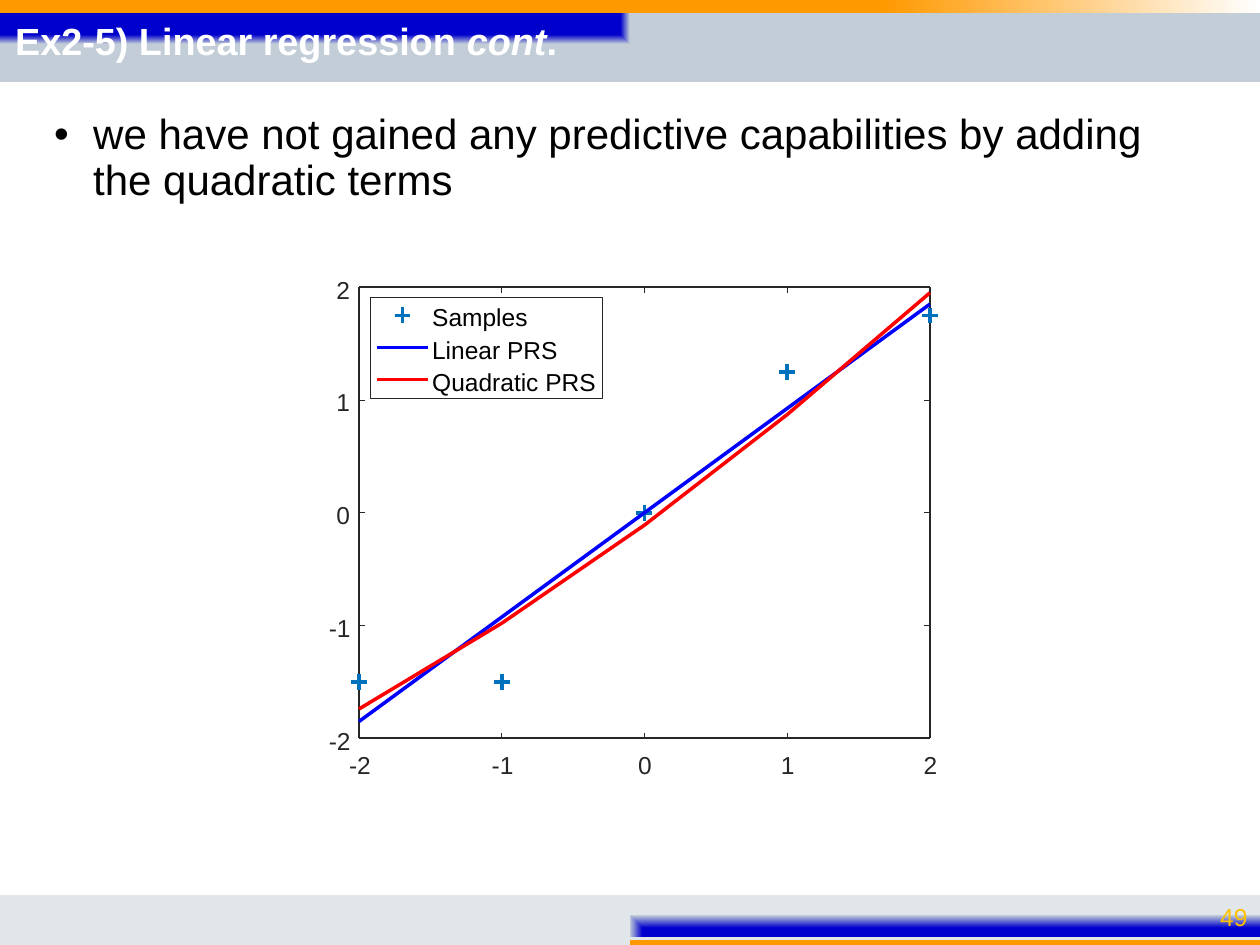
import pptx
import pptx.dml.color
import pptx.enum.shapes
import pptx.enum.text
import pptx.oxml
import pptx.oxml.ns
import pptx.util
from dataclasses import dataclass
from typing import NamedTuple

COLORS = {
    "orange": "FF9900", "navy": "0000CC", "steel": "C2CDD7", "mist": "E1E6EB",
    "white": "FFFFFF", "black": "000000", "gold": "FFC000", "axis": "262626",
    "sample": "0072BD", "linear": "0000FF", "quadratic": "FF0000",
}
UNIT = pptx.util.Inches(0.1)
COLUMNS, ROWS = 100, 75
FONT = "Arial"
TICKS = range(-2, 3)
TICK_LENGTH = 0.45
MARK_REACH = 0.63


class Area(NamedTuple):
    left: float
    top: float
    width: float
    height: float

    def emu(self) -> list[int]:
        return [round(value * UNIT) for value in self]


class Spot(NamedTuple):
    column: float
    row: float

    def shift(self, columns: float, rows: float) -> "Spot":
        return Spot(self.column + columns, self.row + rows)

    def emu(self) -> tuple[int, int]:
        return round(self.column * UNIT), round(self.row * UNIT)


@dataclass
class Band:
    area: Area
    stops: list[tuple[int, str]]
    direction: str


@dataclass
class Series:
    name: str
    color: str
    values: list[float]
    marked: bool
    label_width: float


PLOT = Area(28.5, 22.8, 45.3, 35.8)
LEGEND = Area(29.4, 23.6, 18.4, 8)
LEGEND_STEP = 2.55


def corner(left: int, top: int, right: int, bottom: int) -> str:
    sides = f'l="{left}" t="{top}" r="{right}" b="{bottom}"'
    return f'<a:path path="rect"><a:fillToRect {sides}/></a:path>'


TOP_LEFT = corner(0, 0, 100000, 100000)
BOTTOM_RIGHT = corner(100000, 100000, 0, 0)
BANDS = [
    Band(Area(0, 0.5, COLUMNS, 6), [(25, "navy"), (75, "navy"), (100, "steel")], TOP_LEFT),
    Band(Area(0, 0, COLUMNS, 1),
         [(46, "orange"), (70, "orange"), (100, "white"), (100, "mist")],
         '<a:lin ang="0" scaled="1"/>'),
    Band(Area(0, ROWS - 0.8, COLUMNS, 0.8),
         [(50, "orange"), (93, "orange"), (100, "white"), (100, "mist")], BOTTOM_RIGHT),
    Band(Area(0, 71, COLUMNS, 3.3),
         [(40, "navy"), (100, "steel"), (100, "mist")], BOTTOM_RIGHT),
]
SERIES = [
    Series("Samples", "sample", [-1.5, -1.5, 0, 1.25, 1.75], True, 9.1),
    Series("Linear PRS", "linear", [-1.85, -0.925, 0, 0.925, 1.85], False, 11.6),
    Series("Quadratic PRS", "quadratic", [-1.74, -0.98, -0.11, 0.87, 1.95], False, 14.8),
]


def rgb(color: str) -> pptx.dml.color.RGBColor:
    return pptx.dml.color.RGBColor.from_string(COLORS[color])


def apply(target, formats: dict) -> None:
    for name, value in formats.items():
        setattr(target, name, value)


def locate(x: float, y: float) -> Spot:
    return Spot(PLOT.left + (x + 2) / 4 * PLOT.width, PLOT.top + (2 - y) / 4 * PLOT.height)


def set_line(line, color: str, width: float) -> None:
    line.color.rgb = rgb(color)
    line.width = pptx.util.Pt(width)


def add_box(page, area: Area, fill: str | None = None, outline: str | None = None):
    box = page.shapes.add_shape(pptx.enum.shapes.MSO_SHAPE.RECTANGLE, *area.emu())
    box.shadow.inherit = False
    box.fill.background()
    box.line.fill.background()
    if fill:
        box.fill.solid()
        box.fill.fore_color.rgb = rgb(fill)
    if outline:
        set_line(box.line, outline, 0.5)
    return box


def add_band(page, band: Band) -> None:
    properties = add_box(page, band.area).element.spPr
    stops = "".join(
        f'<a:gs pos="{share * 1000}"><a:srgbClr val="{COLORS[color]}"/></a:gs>'
        for share, color in band.stops)
    gradient = pptx.oxml.parse_xml(
        f'<a:gradFill {pptx.oxml.ns.nsdecls("a")} rotWithShape="1">'
        f"<a:gsLst>{stops}</a:gsLst>{band.direction}</a:gradFill>")
    properties.replace(properties.find(pptx.oxml.ns.qn("a:noFill")), gradient)


def add_line(page, start: Spot, end: Spot, color: str, width: float) -> None:
    line = page.shapes.add_connector(
        pptx.enum.shapes.MSO_CONNECTOR.STRAIGHT, *start.emu(), *end.emu())
    set_line(line.line, color, width)
    line.element.spPr.append(
        pptx.oxml.parse_xml(f'<a:effectLst {pptx.oxml.ns.nsdecls("a")}/>'))


def add_strokes(page, strokes: list[list[Spot]], color: str) -> None:
    builder = page.shapes.build_freeform(*strokes[0][0].emu())
    for index, stroke in enumerate(strokes):
        if index:
            builder.move_to(*stroke[0].emu())
        builder.add_line_segments([spot.emu() for spot in stroke[1:]], close=False)
    shape = builder.convert_to_shape()
    shape.shadow.inherit = False
    shape.fill.background()
    set_line(shape.line, color, 2)


def add_mark(page, spot: Spot, color: str) -> None:
    add_strokes(page, [
        [spot.shift(0, -MARK_REACH), spot.shift(0, MARK_REACH)],
        [spot.shift(-MARK_REACH, 0), spot.shift(MARK_REACH, 0)],
    ], color)


def add_span(para, text: str, size: float, color: str, **formats) -> None:
    span = para.add_run()
    span.text = text
    span.font.color.rgb = rgb(color)
    apply(span.font, {"name": FONT, "size": pptx.util.Pt(size), **formats})


def add_label(page, area: Area, text: str, color: str) -> None:
    box = page.shapes.add_textbox(*area.emu())
    apply(box.text_frame, {
        "margin_left": 0, "margin_top": 0, "margin_right": 0, "margin_bottom": 0,
        "word_wrap": False, "auto_size": pptx.enum.text.MSO_AUTO_SIZE.SHAPE_TO_FIT_TEXT})
    add_span(box.text_frame.paragraphs[0], text, 14, color)


def prepare(holder, area: Area, anchor, formats: dict):
    apply(holder, dict(zip(("left", "top", "width", "height"), area.emu())))
    apply(holder.text_frame, {"vertical_anchor": anchor, "word_wrap": True,
                              "auto_size": pptx.enum.text.MSO_AUTO_SIZE.NONE})
    para = holder.text_frame.paragraphs[0]
    apply(para, {"line_spacing": 0.9, **formats})
    holder.element.getparent().append(holder.element)
    return para


def add_texts(page) -> None:
    anchors, aligns = pptx.enum.text.MSO_ANCHOR, pptx.enum.text.PP_ALIGN
    number = page.shapes.add_textbox(*Area(92.4, 71.3, 7.6, 2.9).emu())
    para = prepare(number, Area(92.4, 71.3, 7.6, 2.9), anchors.MIDDLE,
                   {"alignment": aligns.RIGHT, "line_spacing": 1.0})
    add_span(para, "49", 14, "gold")
    para = prepare(page.placeholders[1], Area(3.3, 8.5, 93.3, 61.5), anchors.TOP,
                   {"alignment": aligns.LEFT, "space_before": pptx.util.Pt(18)})
    properties = para._p.get_or_add_pPr()
    properties.set("marL", str(round(3.1 * UNIT)))
    properties.set("indent", str(round(-3.1 * UNIT)))
    add_span(para, "we have not gained any predictive capabilities by adding "
                   "the quadratic terms", 24, "black")
    para = prepare(page.shapes.title, Area(0.2, 1.1, 99.8, 4.6), anchors.MIDDLE,
                   {"alignment": aligns.LEFT, "space_before": pptx.util.Pt(0)})
    for text, italic in (("Ex2-5) Linear regression ", False), ("cont", True), (".", False)):
        add_span(para, text, 21.6, "white", bold=True, italic=italic)


def add_axes(page) -> None:
    add_box(page, PLOT, fill="white")
    for side, inward in ((-2, 1), (2, -1)):
        add_line(page, locate(-2, side), locate(2, side), "axis", 1)
        add_line(page, locate(side, -2), locate(side, 2), "axis", 1)
        for tick in TICKS:
            foot, edge = locate(tick, side), locate(side, tick)
            add_line(page, foot, foot.shift(0, -inward * TICK_LENGTH), "axis", 0.5)
            add_line(page, edge, edge.shift(inward * TICK_LENGTH, 0), "axis", 0.5)
    for tick in TICKS:
        width, back, out = (2.8, 0.8, 2.4) if tick < 0 else (2.1, 0.5, 1.8)
        for spot in (locate(tick, -2).shift(-back, 0.9), locate(-2, tick).shift(-out, -1)):
            add_label(page, Area(*spot, width, 2.7), str(tick), "axis")


def add_series(page) -> None:
    for series in SERIES:
        spots = [locate(x, y) for x, y in zip(TICKS, series.values)]
        if series.marked:
            for spot in spots:
                add_mark(page, spot, series.color)
        else:
            add_strokes(page, [spots], series.color)


def add_legend(page) -> None:
    add_box(page, LEGEND, fill="white")
    for index, series in enumerate(SERIES):
        top = LEGEND.top + 0.4 + index * LEGEND_STEP
        add_label(page, Area(34.3, top, series.label_width, 2.7), series.name, "black")
        middle = Spot(31.95, top + 1.03)
        if series.marked:
            add_mark(page, middle, series.color)
        else:
            add_line(page, middle.shift(-2.05, 0), middle.shift(2.05, 0), series.color, 2)
    add_box(page, LEGEND, outline="axis")


def main() -> None:
    deck = pptx.Presentation()
    apply(deck, {"slide_width": COLUMNS * UNIT, "slide_height": ROWS * UNIT})
    page = deck.slides.add_slide(deck.slide_layouts[1])
    for band in BANDS:
        add_band(page, band)
    for draw in (add_texts, add_axes, add_series, add_legend):
        draw(page)
    deck.save("out.pptx")


if __name__ == "__main__":
    main()
